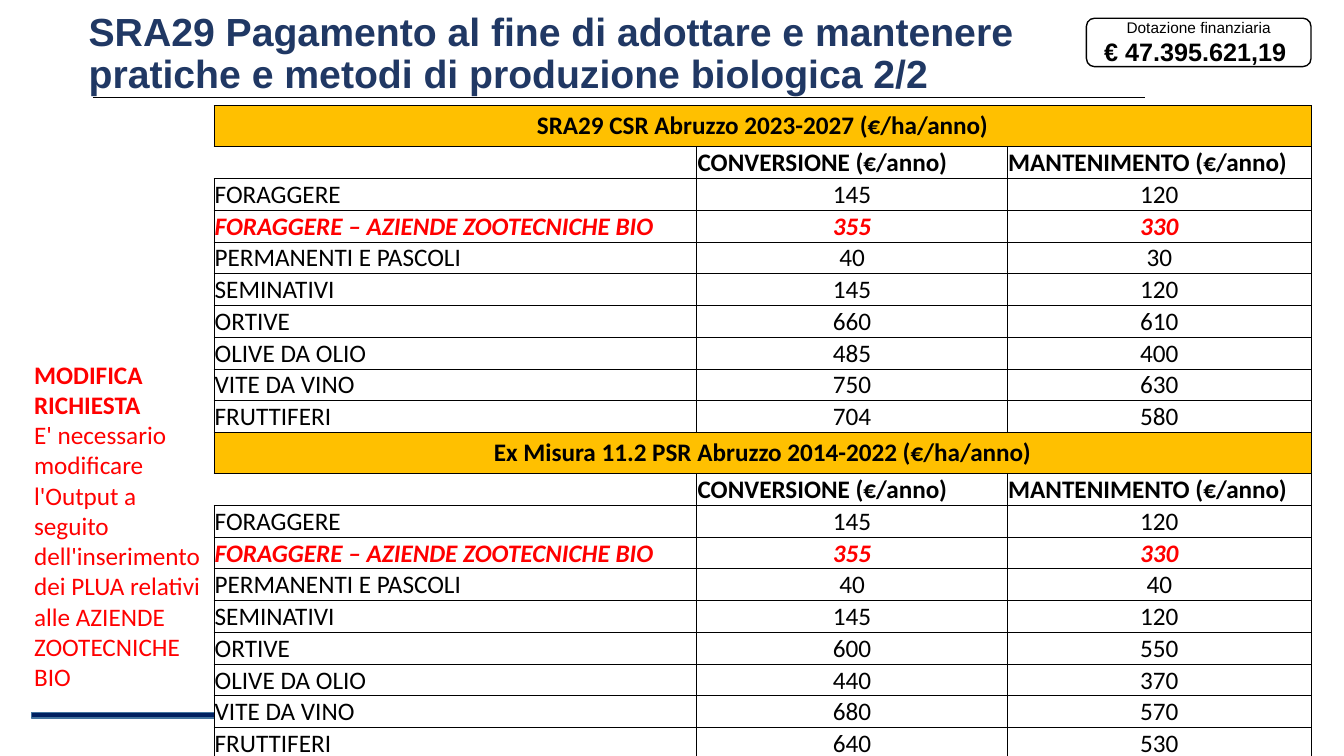
from lxml.etree import SubElement
from pptx import Presentation
from pptx.dml.color import RGBColor
from pptx.enum.shapes import MSO_CONNECTOR, MSO_SHAPE
from pptx.enum.text import MSO_ANCHOR, MSO_AUTO_SIZE, PP_ALIGN
from pptx.oxml.ns import qn
from pptx.util import Cm, Pt

CROPS = ["FORAGGERE", "FORAGGERE – AZIENDE ZOOTECNICHE BIO", "PERMANENTI E PASCOLI",
         "SEMINATIVI", "ORTIVE", "OLIVE DA OLIO", "VITE DA VINO", "FRUTTIFERI"]
HIGHLIGHT = CROPS[1]
HEADS = ["", "CONVERSIONE (€/anno)", "MANTENIMENTO (€/anno)"]
PLANS = [
    ("SRA29 CSR Abruzzo 2023-2027 (€/ha/anno)",
     [145, 355, 40, 145, 660, 485, 750, 704], [120, 330, 30, 120, 610, 400, 630, 580]),
    ("Ex Misura 11.2 PSR Abruzzo 2014-2022 (€/ha/anno)",
     [145, 355, 40, 145, 600, 440, 680, 640], [120, 330, 40, 120, 550, 370, 570, 530]),
]


def rgb(value):
    return RGBColor.from_string(value)


def add_run(p, text, size, color="000000", font="Calibri", bold=False, italic=False):
    r = p.add_run()
    r.text = text
    r.font.name, r.font.size = font, Pt(size)
    r.font.bold, r.font.italic = bold, italic
    r.font.color.rgb = rgb(color)


def next_paragraph(tf, i):
    return tf.add_paragraph() if i else tf.paragraphs[0]


def add_block(s, kind, x, y, w, h, fill, line):
    sp = s.shapes.add_shape(kind, Cm(x), Cm(y), Cm(w), Cm(h))
    sp.shadow.inherit = False
    sp.fill.solid()
    sp.fill.fore_color.rgb = rgb(fill)
    sp.line.color.rgb = rgb(line)
    sp.line.width = Pt(1)
    return sp


def add_title(s, x, y, w, h):
    sp = s.shapes.title
    sp.left, sp.top, sp.width, sp.height = Cm(x), Cm(y), Cm(w), Cm(h)
    tf = sp.text_frame
    tf.word_wrap = True
    tf.auto_size = MSO_AUTO_SIZE.NONE
    tf.vertical_anchor = MSO_ANCHOR.MIDDLE
    for i, text in enumerate(["SRA29 Pagamento al fine di adottare e mantenere",
                              "pratiche e metodi di produzione biologica 2/2"]):
        p = next_paragraph(tf, i)
        p.alignment = PP_ALIGN.LEFT
        p.line_spacing = 0.9
        p.space_before = Pt(0)
        add_run(p, text, 28, "203864", "Arial", True)
    rule_x, rule_y = x + 0.36, y + 1.93
    rule = s.shapes.add_connector(MSO_CONNECTOR.STRAIGHT, Cm(rule_x), Cm(rule_y),
                                  Cm(rule_x + 26.52), Cm(rule_y))
    rule.line.color.rgb = rgb("000000")
    rule.line.width = Pt(0.5)
    SubElement(rule.element.spPr, qn("a:effectLst"))


def add_budget(s, x, y, w, h):
    sp = add_block(s, MSO_SHAPE.ROUNDED_RECTANGLE, x, y, w, h, "FFFFFF", "000000")
    tf = sp.text_frame
    tf.word_wrap = True
    tf.vertical_anchor = MSO_ANCHOR.MIDDLE
    for i, (text, size) in enumerate([("Dotazione finanziaria", 11), ("€ 47.395.621,19 ", 18)]):
        p = next_paragraph(tf, i)
        p.alignment = PP_ALIGN.CENTER
        add_run(p, text, size, font="Arial", bold=i == 1)


def set_borders(cell, sides):
    tcPr = cell._tc.get_or_add_tcPr()
    for i, side in enumerate("LRTB"):
        ln = SubElement(tcPr, qn("a:ln" + side), w=str(Pt(0.5)))
        if side in sides:
            SubElement(SubElement(ln, qn("a:solidFill")), qn("a:srgbClr"), val="000000")
        else:
            SubElement(ln, qn("a:noFill"))
        tcPr.insert(i, ln)


def fill_cell(cell, text, centred, fill="FFFFFF", sides="LRTB", **style):
    cell.vertical_anchor = MSO_ANCHOR.BOTTOM
    cell.margin_left = cell.margin_right = cell.margin_top = Cm(0.02)
    cell.margin_bottom = 0
    cell.fill.solid()
    cell.fill.fore_color.rgb = rgb(fill)
    set_borders(cell, sides)
    p = cell.text_frame.paragraphs[0]
    p.alignment = PP_ALIGN.CENTER if centred else PP_ALIGN.LEFT
    if text:
        add_run(p, text, 18, **style)


def add_payments(s, x, y, w, h):
    block = len(CROPS) + 2
    rows = block * len(PLANS)
    table = s.shapes.add_table(rows, 3, Cm(x), Cm(y), Cm(w), Cm(h)).table
    table.first_row = table.horz_banding = False
    for col, share in zip(table.columns, [0.44, 0.283, 0.277]):
        col.width = Cm(w * share)
    band_h = 1.03
    row_h = (h - band_h * len(PLANS)) / (rows - len(PLANS))
    for i, row in enumerate(table.rows):
        row.height = Cm(row_h if i % block else band_h)
    for n, (name, conversion, maintenance) in enumerate(PLANS):
        top = n * block
        band = table.cell(top, 0)
        band.merge(table.cell(top, 2))
        for c in range(3):
            fill_cell(table.cell(top, c), "" if c else name, True, "FFC000", bold=True)
        band.margin_left = band.margin_right = Cm(0.25)
        band.margin_top = band.margin_bottom = Cm(0.13)
        for c, head in enumerate(HEADS):
            fill_cell(table.cell(top + 1, c), head, False,
                      sides="LRTB" if head else "RTB", bold=True)
        for i, values in enumerate(zip(CROPS, conversion, maintenance)):
            marked = values[0] == HIGHLIGHT
            for c, value in enumerate(values):
                fill_cell(table.cell(top + 2 + i, c), str(value), c > 0, bold=marked,
                          italic=marked, color="FF0000" if marked else "000000")


def add_request(s, x, y, w, h):
    tf = s.shapes.add_textbox(Cm(x), Cm(y), Cm(w), Cm(h)).text_frame
    tf.word_wrap = True
    add_run(tf.paragraphs[0], "MODIFICA RICHIESTA", 18, "FF0000", bold=True)
    add_run(tf.add_paragraph(), "E' necessario modificare l'Output a seguito dell'inserimento "
            "dei PLUA relativi alle AZIENDE ZOOTECNICHE BIO", 18, "FF0000")


def main():
    prs = Presentation()
    prs.slide_width, prs.slide_height = Cm(33.87), Cm(19.05)
    s = prs.slides.add_slide(prs.slide_layouts[5])
    add_block(s, MSO_SHAPE.RECTANGLE, 0.79, 17.96, 11.96, 0.13, "002060", "43739E")
    add_title(s, 1.98, 0.53, 31.24, 1.7)
    add_budget(s, 27.38, 0.46, 5.66, 1.22)
    add_payments(s, 5.39, 2.66, 27.66, 16.46)
    add_request(s, 0.61, 8.92, 4.78, 8.71)
    prs.save("out.pptx")


if __name__ == "__main__":
    main()
